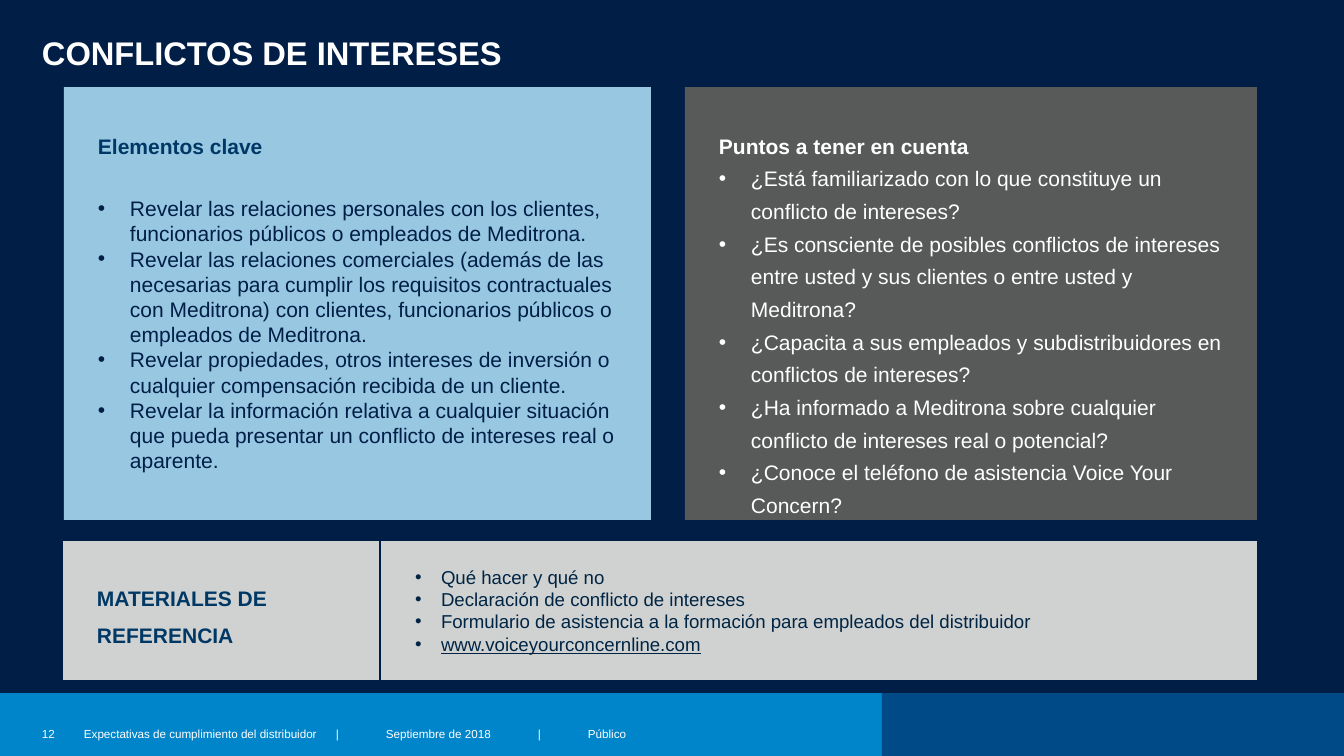
from lxml.etree import SubElement
from pptx import Presentation
from pptx.dml.color import RGBColor
from pptx.enum.shapes import MSO_SHAPE as SHAPE
from pptx.enum.text import MSO_ANCHOR as ANCHOR, PP_ALIGN as ALIGN
from pptx.oxml.ns import qn
from pptx.util import Emu, Pt

PX_PER_INCH = 84
COLORS = {
    "navy": "001E46", "blue": "0085CA", "deep_blue": "004B87",
    "light_blue": "98C7E2", "dark_gray": "585A5A", "light_gray": "D0D1D1",
    "heading": "003865", "reference": "002544", "white": "FFFFFF",
}
KEY_ELEMENTS = [
    "Revelar las relaciones personales con los clientes, funcionarios públicos "
    "o empleados de Meditrona.",
    "Revelar las relaciones comerciales (además de las necesarias para cumplir "
    "los requisitos contractuales con Meditrona) con clientes, funcionarios "
    "públicos o empleados de Meditrona.",
    "Revelar propiedades, otros intereses de inversión o cualquier compensación "
    "recibida de un cliente.",
    "Revelar la información relativa a cualquier situación que pueda presentar "
    "un conflicto de intereses real o aparente.",
]
QUESTIONS = [
    "¿Está familiarizado con lo que constituye un conflicto de intereses?",
    "¿Es consciente de posibles conflictos de intereses entre usted y sus "
    "clientes o entre usted y Meditrona?",
    "¿Capacita a sus empleados y subdistribuidores en conflictos de intereses?",
    "¿Ha informado a Meditrona sobre cualquier conflicto de intereses real o "
    "potencial?",
    "¿Conoce el teléfono de asistencia Voice Your Concern?",
]
REFERENCES = [
    "Qué hacer y qué no",
    "Declaración de conflicto de intereses",
    "Formulario de asistencia a la formación para empleados del distribuidor",
    "www.voiceyourconcernline.com",
]


def px(n):
    return Emu(round(n * 914400 / PX_PER_INCH))


def rgb(name):
    return RGBColor.from_string(COLORS[name])


def set_frame(tf, anchor=ANCHOR.TOP, inset_x=0, inset_y=0):
    tf.word_wrap = True
    tf.vertical_anchor = anchor
    tf.margin_left = tf.margin_right = px(inset_x)
    tf.margin_top = tf.margin_bottom = px(inset_y)


def add_panel(slide, box, fill, **frame):
    sp = slide.shapes.add_shape(SHAPE.RECTANGLE, *map(px, box))
    sp.shadow.inherit = False
    sp.fill.solid()
    sp.fill.fore_color.rgb = rgb(fill)
    sp.line.fill.background()
    set_frame(sp.text_frame, **frame)
    return sp.text_frame


def add_label(slide, box, **frame):
    tf = slide.shapes.add_textbox(*map(px, box)).text_frame
    set_frame(tf, **frame)
    return tf


def write(tf, text, size, color, spacing, bold=False):
    """Fill the empty first paragraph, or add one after the text."""
    p = tf.add_paragraph() if tf.text else tf.paragraphs[0]
    p.text = text
    p.alignment = ALIGN.LEFT
    p.line_spacing = spacing
    for r in p.runs:
        r.font.name = "Arial"
        r.font.size = Pt(size)
        r.font.bold = bold
        r.font.color.rgb = rgb(color)
    return p


def write_bullets(tf, items, size, color, spacing, indent):
    paragraphs = [write(tf, item, size, color, spacing) for item in items]
    for p in paragraphs:
        pPr = p._p.get_or_add_pPr()
        pPr.set("marL", str(px(indent)))
        pPr.set("indent", str(-px(indent)))
        SubElement(pPr, qn("a:buFont")).set("typeface", "Arial")
        SubElement(pPr, qn("a:buChar")).set("char", "•")
    return paragraphs


def set_tabs(p, stops):
    tabs = SubElement(p._p.get_or_add_pPr(), qn("a:tabLst"))
    for stop in stops:
        tab = SubElement(tabs, qn("a:tab"))
        tab.set("pos", str(px(stop)))
        tab.set("algn", "l")


def add_footer(slide):
    add_panel(slide, (0, 693, 882, 63), "blue")
    add_panel(slide, (882, 693, 462, 63), "deep_blue")
    tf = add_label(slide, (84, 723, 756, 21), anchor=ANCHOR.MIDDLE)
    p = write(tf, "Expectativas de cumplimiento del distribuidor\t|\t"
              "Septiembre de 2018\t|\tPúblico", 10, "white", Pt(12))
    set_tabs(p, (252, 302, 454, 504))
    tf = add_label(slide, (42, 723, 42, 21), anchor=ANCHOR.MIDDLE)
    write(tf, "12", 10, "white", Pt(12))


def add_topics(slide):
    tf = add_panel(slide, (685, 87, 572, 433), "dark_gray", inset_x=34, inset_y=34)
    write(tf, "Puntos a tener en cuenta", 18, "white", Pt(32), bold=True)
    write_bullets(tf, QUESTIONS, 18, "white", Pt(28), 32)

    tf = add_panel(slide, (64, 87, 587, 433), "light_blue", inset_x=34, inset_y=34)
    write(tf, "Elementos clave", 18, "heading", Pt(32), bold=True)
    bullets = write_bullets(tf, KEY_ELEMENTS, 18, "navy", Pt(21.6), 32)
    bullets[0].space_before = Pt(32)


def add_references(slide):
    tf = add_panel(slide, (63, 541, 316, 139), "light_gray",
                   anchor=ANCHOR.MIDDLE, inset_x=34)
    write(tf, "MATERIALES DE REFERENCIA", 18, "heading", Pt(32), bold=True)
    tf = add_panel(slide, (381, 541, 876, 139), "light_gray",
                   anchor=ANCHOR.MIDDLE, inset_x=34, inset_y=8)
    bullets = write_bullets(tf, REFERENCES, 16, "reference", Pt(19), 26)
    bullets[-1].runs[0].font.underline = True


def main():
    prs = Presentation()
    prs.slide_width, prs.slide_height = px(1344), px(756)
    slide = prs.slides.add_slide(prs.slide_layouts[6])
    slide.background.fill.solid()
    slide.background.fill.fore_color.rgb = rgb("navy")
    add_footer(slide)
    title = add_label(slide, (42, 39, 1260, 35))
    write(title, "CONFLICTOS DE INTERESES", 28, "white", 0.85, bold=True)
    add_topics(slide)
    add_references(slide)
    prs.save("out.pptx")


if __name__ == "__main__":
    main()
